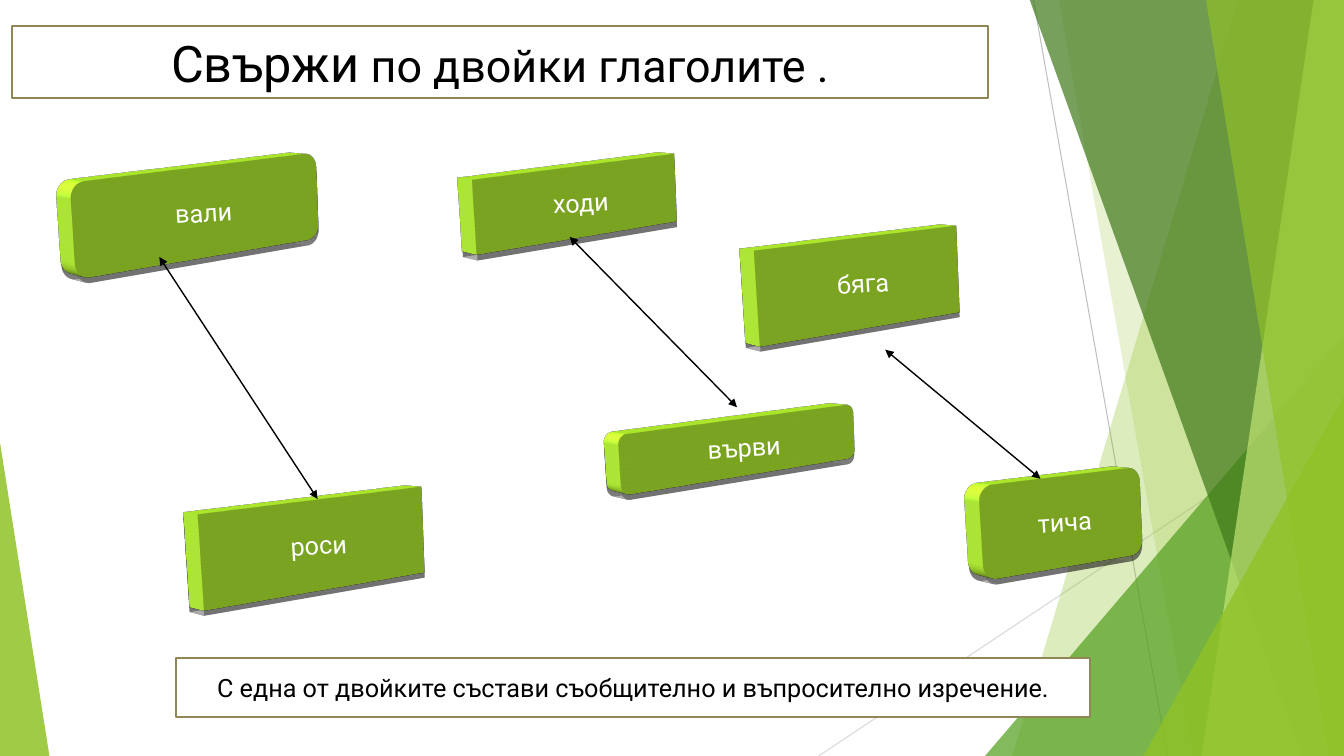
from lxml import etree
from pptx import Presentation
from pptx.dml.color import RGBColor
from pptx.enum.shapes import MSO_CONNECTOR as CONN, MSO_SHAPE as SHAPE
from pptx.enum.text import MSO_ANCHOR, PP_ALIGN
from pptx.oxml import parse_xml
from pptx.oxml.ns import nsdecls, qn
from pptx.util import Inches, Pt

COLORS = {"green": "90C226", "mid": "54A021", "dark": "3F7819", "lime": "C0E474",
          "gray": "BFBFBF", "pale": "D9D9D9", "olive": "918655",
          "white": "FFFFFF", "black": "000000"}
FONT = "Roboto"
W, H, TOP = 13.33, 7.5, -0.01

SHADOW = f"""<a:outerShdw {nsdecls('a')} blurRad="225425" dist="50800" dir="5220000" algn="ctr">
<a:srgbClr val="{COLORS['black']}"><a:alpha val="33000"/></a:srgbClr></a:outerShdw>"""
SCENE = f"""<a:scene3d {nsdecls('a')}><a:camera prst="perspectiveFront" fov="3300000">
<a:rot lat="486000" lon="19530000" rev="174000"/></a:camera>
<a:lightRig rig="harsh" dir="t"><a:rot lat="0" lon="0" rev="3000000"/></a:lightRig></a:scene3d>"""
DEPTH = f"""<a:sp3d {nsdecls('a')} extrusionH="254000" contourW="19050">
<a:bevelT w="82550" h="44450" prst="angle"/><a:bevelB w="82550" h="44450" prst="angle"/>
<a:contourClr><a:srgbClr val="{COLORS['white']}"/></a:contourClr></a:sp3d>"""

prs = Presentation()
prs.slide_width, prs.slide_height = Inches(W), Inches(H)
slide = prs.slides.add_slide(prs.slide_layouts[6])
shapes = slide.shapes


def add_line(ends, color, width):
    line = shapes.add_connector(CONN.STRAIGHT, *map(Inches, ends))
    line.line.color.rgb = RGBColor.from_string(COLORS[color])
    line.line.width = Pt(width)
    etree.SubElement(line._element.spPr, qn("a:effectLst"))
    return line


def add_box(kind, place, fill, runs):
    box = shapes.add_shape(kind, *map(Inches, place))
    box.shadow.inherit = False
    box.fill.solid()
    box.fill.fore_color.rgb = RGBColor.from_string(COLORS[fill])
    box.line.fill.background()
    frame = box.text_frame
    frame.word_wrap = True
    frame.vertical_anchor = MSO_ANCHOR.MIDDLE
    para = frame.paragraphs[0]
    para.alignment = PP_ALIGN.CENTER
    for text, size, color in runs:
        run = para.add_run()
        run.text = text
        run.font.size = Pt(size)
        run.font.name = FONT
        run.font.color.rgb = RGBColor.from_string(COLORS[color])
    return box


add_line((10.25, 0, 11.58, H), "gray", 0.75)
add_line((W, 4.03, 8.12, H), "pale", 0.75)

facets = [
    ("band", (12.28, 10.04), "green", 30),
    ("band", (10.5, 11.83), "green", 20),
    ("peak", (9.77, 3.33, 3.56, 4.17, 1), "mid", 72),
    ("band", (10.21, 12.91), "dark", 70),
    ("band", (13.03, 11.92), "lime", 70),
    ("band", (11.96, 13.18), "green", 65),
    ("peak", (11.34, 3.93, 1.99, 3.57, 1), "green", 80),
    ("peak", (0, 4.39, 0.49, 3.11, 0), "green", 85),
]
for kind, geo, color, alpha in facets:
    if kind == "band":
        high, low = geo
        pen = shapes.build_freeform(Inches(high), Inches(TOP))
        pen.add_line_segments([(Inches(x), Inches(y)) for x, y in
                               [(W, TOP), (W, H), (low, H)]])
        facet = pen.convert_to_shape()
    else:
        facet = shapes.add_shape(SHAPE.ISOSCELES_TRIANGLE, *map(Inches, geo[:4]))
        facet.adjustments[0] = geo[4]
    facet.shadow.inherit = False
    facet.line.fill.background()
    facet.fill.solid()
    facet.fill.fore_color.rgb = RGBColor.from_string(COLORS[color])
    tint = facet._element.spPr.find(qn("a:solidFill"))[0]
    etree.SubElement(tint, qn("a:alpha")).set("val", str(alpha * 1000))

title = add_box(SHAPE.RECTANGLE, (0.12, 0.26, 9.68, 0.71), "white",
                [("Свържи", 36, "black"), (" по двойки глаголите .", 32, "black")])

verbs = [
    ("вали", SHAPE.ROUNDED_RECTANGLE, (0.55, 1.65, 2.94, 0.91)),
    ("роси", SHAPE.RECTANGLE, (1.82, 4.95, 2.68, 0.91)),
    ("ходи", SHAPE.RECTANGLE, (4.55, 1.65, 2.42, 0.71)),
    ("върви", SHAPE.ROUNDED_RECTANGLE, (5.97, 4.15, 2.82, 0.57)),
    ("бяга", SHAPE.RECTANGLE, (7.35, 2.35, 2.42, 0.91)),
    ("тича", SHAPE.ROUNDED_RECTANGLE, (9.6, 4.72, 1.92, 0.91)),
]
for verb, kind, place in verbs:
    block = add_box(kind, place, "green", [(verb, 18, "white")])
    props = block._element.spPr
    props.find(qn("a:effectLst")).append(parse_xml(SHADOW))
    props.append(parse_xml(SCENE))
    props.append(parse_xml(DEPTH))

pairs = [(1.58, 2.55, 3.15, 4.95), (5.65, 2.35, 7.31, 4.04), (8.78, 3.47, 10.32, 4.75)]
for ends in pairs:
    arrow = add_line(ends, "black", 1)
    for tip in ("a:headEnd", "a:tailEnd"):
        etree.SubElement(arrow.line._get_or_add_ln(), qn(tip)).set("type", "triangle")

task = add_box(SHAPE.RECTANGLE, (1.75, 6.53, 9.06, 0.58), "white",
               [("С една от двойките състави съобщително и въпросително изречение.",
                 18, "black")])
for panel in (title, task):
    panel.line.color.rgb = RGBColor.from_string(COLORS["olive"])
    panel.line.width = Pt(1.5)

prs.save("out.pptx")
